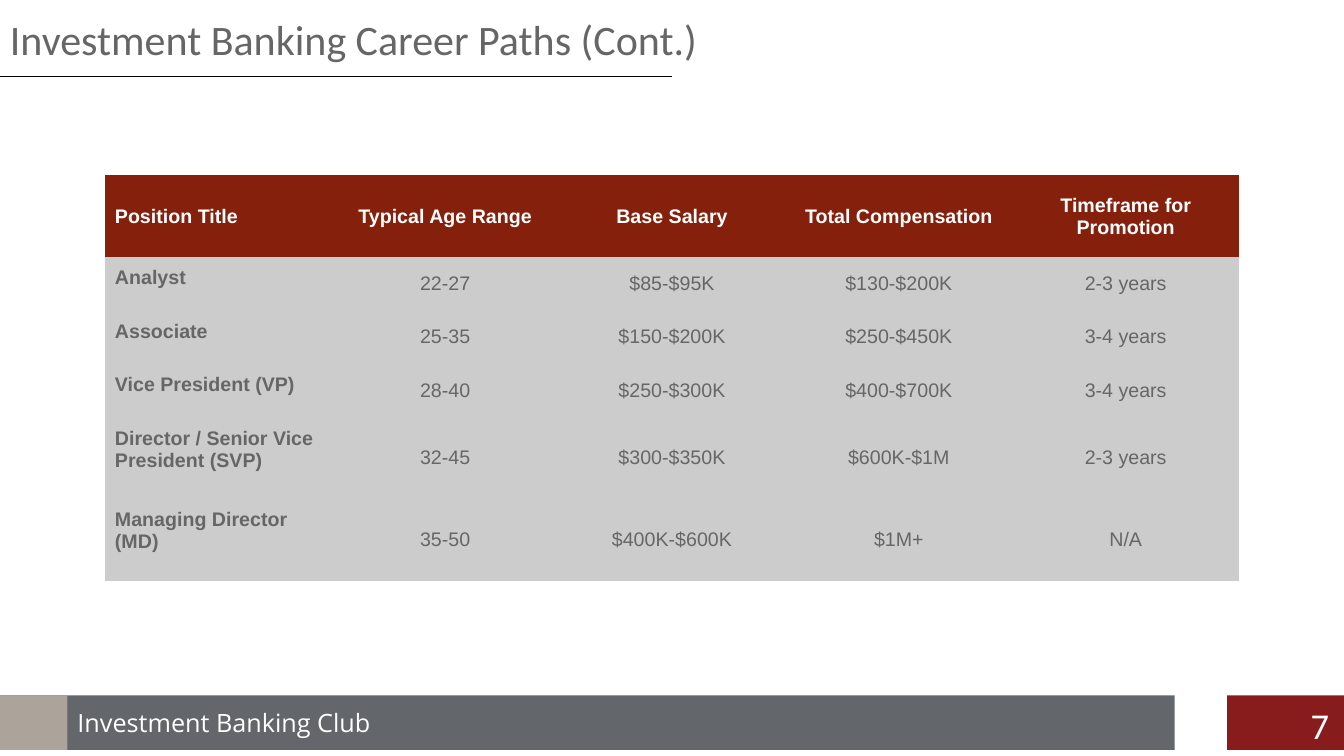
import pptx
import pptx.util
import pptx.dml.color
import pptx.enum.shapes
import pptx.enum.text
from lxml import etree

Inches = pptx.util.Inches
ALIGN = pptx.enum.text.PP_ALIGN
ANCHOR = pptx.enum.text.MSO_ANCHOR

TITLE = "Investment Banking Career Paths (Cont.)"
CLUB = "Investment Banking Club"
PAGE_NUMBER = "7"
CAREER_ROWS = [
    ("Position Title", "Typical Age Range", "Base Salary", "Total Compensation",
     "Timeframe for Promotion"),
    ("Analyst", "22-27", "$85-$95K", "$130-$200K", "2-3 years"),
    ("Associate", "25-35", "$150-$200K", "$250-$450K", "3-4 years"),
    ("Vice President (VP)", "28-40", "$250-$300K", "$400-$700K", "3-4 years"),
    ("Director / Senior Vice President (SVP)", "32-45", "$300-$350K", "$600K-$1M",
     "2-3 years"),
    ("Managing Director (MD)", "35-50", "$400K-$600K", "$1M+", "N/A"),
]
ROW_HEIGHTS = [0.81, 0.53, 0.53, 0.53, 0.81, 0.81]
COLUMN_WIDTH = 2.25
COLORS = {
    "white": "FFFFFF", "black": "000000", "text": "666666", "slate": "63666A",
    "maroon": "881C1C", "taupe": "ACA39A", "header": "85200C", "body": "CCCCCC",
}
FOOTER_TOP, FOOTER_HEIGHT = 6.9, 0.54
FOOTER_BARS = [(0, 11.65, "slate"), (12.17, 1.16, "maroon"), (0, 0.67, "taupe")]
NO_GRID_STYLE = "{2D5ABB26-0587-4C30-8999-92F81FD0307C}"


def color(name):
    return pptx.dml.color.RGBColor.from_string(COLORS[name])


def write(frame, text, size, font, ink, bold=False, align=ALIGN.LEFT):
    frame.word_wrap = True
    para = frame.paragraphs[0]
    para.alignment = align
    span = para.add_run()
    span.text = text
    span.font.size = pptx.util.Pt(size)
    span.font.name = font
    span.font.bold = bold
    span.font.color.rgb = color(ink)


def add_text(page, place, text, inset=0.05, **style):
    """Add a text box; inset is the margin above and below the text."""
    box = page.shapes.add_textbox(*map(Inches, place))
    frame = box.text_frame
    frame.margin_left = frame.margin_right = Inches(0.1)
    frame.margin_top = frame.margin_bottom = Inches(inset)
    write(frame, text, **style)


def add_footer_bar(page, left, width, fill):
    bar = page.shapes.add_shape(
        pptx.enum.shapes.MSO_SHAPE.RECTANGLE, Inches(left), Inches(FOOTER_TOP),
        Inches(width), Inches(FOOTER_HEIGHT))
    bar.shadow.inherit = False
    bar.fill.solid()
    bar.fill.fore_color.rgb = color(fill)
    bar.line.fill.background()


def add_title_rule(page):
    rule = page.shapes.add_connector(
        pptx.enum.shapes.MSO_CONNECTOR.STRAIGHT, 0, Inches(0.76), Inches(6.67), Inches(0.76))
    rule.line.color.rgb = color("black")
    rule.line.width = pptx.util.Pt(0.75)
    etree.SubElement(rule._element.spPr, pptx.oxml.ns.qn("a:effectLst"))


def add_career_table(page):
    column_count = len(CAREER_ROWS[0])
    table = page.shapes.add_table(
        len(CAREER_ROWS), column_count, Inches(1.04), Inches(1.74),
        Inches(COLUMN_WIDTH * column_count), Inches(sum(ROW_HEIGHTS))).table
    table.horz_banding = False
    table._tbl.tblPr.find(pptx.oxml.ns.qn("a:tableStyleId")).text = NO_GRID_STYLE
    for column in table.columns:
        column.width = Inches(COLUMN_WIDTH)
    for r, texts in enumerate(CAREER_ROWS):
        table.rows[r].height = Inches(ROW_HEIGHTS[r])
        for c, text in enumerate(texts):
            header, position = r == 0, c == 0
            cell = table.cell(r, c)
            cell.margin_left = cell.margin_right = Inches(0.1)
            cell.margin_top = cell.margin_bottom = Inches(0.1)
            cell.vertical_anchor = ANCHOR.TOP if position and not header else ANCHOR.MIDDLE
            cell.fill.solid()
            cell.fill.fore_color.rgb = color("header" if header else "body")
            write(cell.text_frame, text, size=14, font="Arial",
                  ink="white" if header else "text", bold=header or position,
                  align=ALIGN.LEFT if position else ALIGN.CENTER)


def main():
    deck = pptx.Presentation()
    deck.slide_width, deck.slide_height = Inches(13.33), Inches(7.5)
    page = deck.slides.add_slide(deck.slide_layouts[6])
    add_title_rule(page)
    for bar in FOOTER_BARS:
        add_footer_bar(page, *bar)
    add_text(page, (0.67, 6.97, 10.98, 0.4), CLUB, size=18, font="Open Sans", ink="white")
    add_text(page, (12.48, 6.93, 0.8, 0.57), PAGE_NUMBER, size=26, font="Calibri",
             ink="white", align=ALIGN.RIGHT)
    add_text(page, (0, 0.03, 7.44, 0.71), TITLE, inset=0.1, size=30, font="Calibri",
             ink="text")
    add_career_table(page)
    deck.save("out.pptx")


if __name__ == "__main__":
    main()
